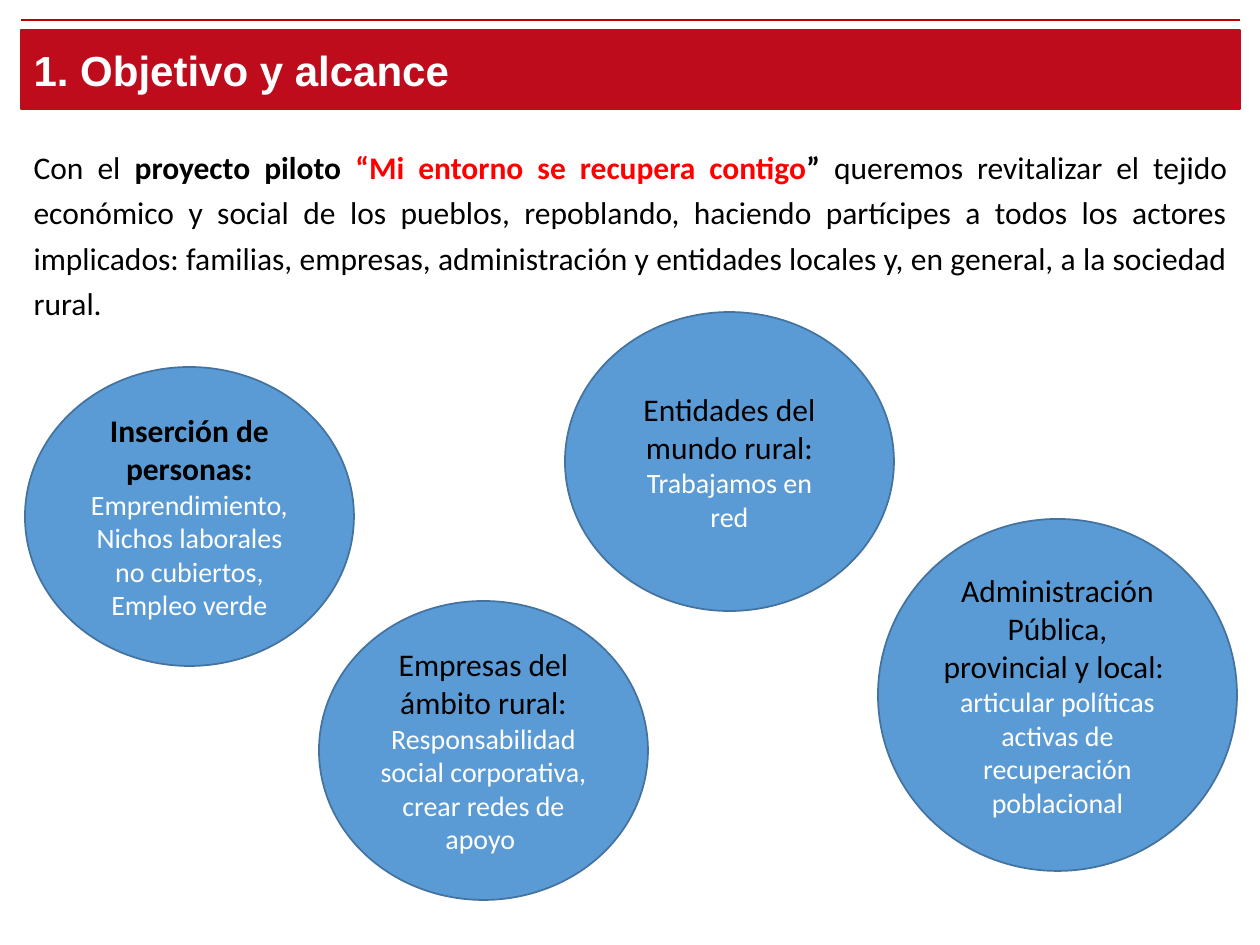
from lxml.etree import SubElement
from pptx import Presentation
from pptx.dml.color import RGBColor
from pptx.enum.shapes import MSO_CONNECTOR, MSO_SHAPE
from pptx.enum.text import MSO_ANCHOR, MSO_AUTO_SIZE, PP_ALIGN
from pptx.oxml.ns import qn
from pptx.util import Pt

EMU_PER_PX = 914400 / 126
COLORS = {
    "banner": "BE0C1C",
    "rule": "C00000",
    "circle": "5B9BD5",
    "outline": "43739E",
    "black": "000000",
    "white": "FFFFFF",
    "red": "FF0000",
}


def px(*lengths):
    return [round(length * EMU_PER_PX) for length in lengths]


def add_run(paragraph, text, color, size=18, bold=False, font="Calibri"):
    run = paragraph.add_run()
    run.text = text
    for key, value in {"name": font, "size": Pt(size), "bold": bold}.items():
        setattr(run.font, key, value)
    run.font.color.rgb = RGBColor.from_string(COLORS[color])


prs = Presentation()
prs.slide_width, prs.slide_height = px(1260, 945)
slide = prs.slides.add_slide(prs.slide_layouts[0])

# Introduction
intro = slide.placeholders[1]
intro.left, intro.top, intro.width, intro.height = px(21, 134, 1219, 644)
intro.text_frame.auto_size = MSO_AUTO_SIZE.NONE
intro_text = intro.text_frame.paragraphs[0]
intro_format = {
    "alignment": PP_ALIGN.JUSTIFY,
    "line_spacing": 1.2,
    "space_before": Pt(10),
}
for key, value in intro_format.items():
    setattr(intro_text, key, value)
add_run(intro_text, "Con el ", "black")
add_run(intro_text, "proyecto piloto ", "black", bold=True)
add_run(intro_text, "“Mi entorno se recupera contigo", "red", bold=True)
add_run(intro_text, "” ", "black", bold=True)
add_run(
    intro_text,
    "queremos revitalizar el tejido económico y social de los pueblos, "
    "repoblando, haciendo partícipes a todos los actores implicados: familias, "
    "empresas, administración y entidades locales y, en general, a la sociedad rural.",
    "black",
)

# Heading
rule = slide.shapes.add_connector(MSO_CONNECTOR.STRAIGHT, *px(1240, 20, 21, 20))
rule.line.color.rgb = RGBColor.from_string(COLORS["rule"])
rule.line.width = Pt(0.75)
SubElement(rule._element.spPr, qn("a:effectLst"))

banner = slide.shapes.title
banner.left, banner.top, banner.width, banner.height = px(21, 30, 1219, 79)
banner.fill.solid()
banner.fill.fore_color.rgb = RGBColor.from_string(COLORS["banner"])
banner.line.color.rgb = RGBColor.from_string(COLORS["banner"])
banner.line.width = Pt(0.75)
banner.text_frame.auto_size = MSO_AUTO_SIZE.NONE
banner.text_frame.vertical_anchor = MSO_ANCHOR.MIDDLE
heading = banner.text_frame.paragraphs[0]
heading.alignment = PP_ALIGN.LEFT
add_run(heading, "1. Objetivo y alcance", "white", size=24, bold=True, font="Arial")

# Participants: box in px, bold lead, paragraphs of (text, color, size) runs
participants = [
    ((25, 367, 329, 299), True, [[
        ("Inserción de personas: ", "black", 18),
        ("Emprendimiento, Nichos laborales no cubiertos, Empleo verde", "white", 16),
    ]]),
    ((319, 601, 329, 299), False, [[
        ("Empresas del ámbito rural: ", "black", 18),
        ("Responsabilidad social corporativa, crear redes de apoyo ", "white", 16),
    ]]),
    ((565, 312, 329, 299), False, [[
        ("Entidades del mundo rural: ", "black", 18),
        ("Trabajamos en red", "white", 16),
    ]]),
    ((878, 519, 359, 352), False, [
        [("Administración Pública, provincial y local: ", "black", 18)],
        [("articular políticas activas de recuperación poblacional", "white", 16)],
    ]),
]
for box, bold_lead, paragraphs in participants:
    circle = slide.shapes.add_shape(MSO_SHAPE.OVAL, *px(*box))
    circle.shadow.inherit = False
    circle.fill.solid()
    circle.fill.fore_color.rgb = RGBColor.from_string(COLORS["circle"])
    circle.line.color.rgb = RGBColor.from_string(COLORS["outline"])
    circle.line.width = Pt(1)
    frame = circle.text_frame
    frame.word_wrap = True
    frame.vertical_anchor = MSO_ANCHOR.MIDDLE
    for index, runs in enumerate(paragraphs):
        paragraph = frame.add_paragraph() if index else frame.paragraphs[0]
        paragraph.alignment = PP_ALIGN.CENTER
        for text, color, size in runs:
            add_run(paragraph, text, color, size, bold=bold_lead and color == "black")

prs.save("out.pptx")
